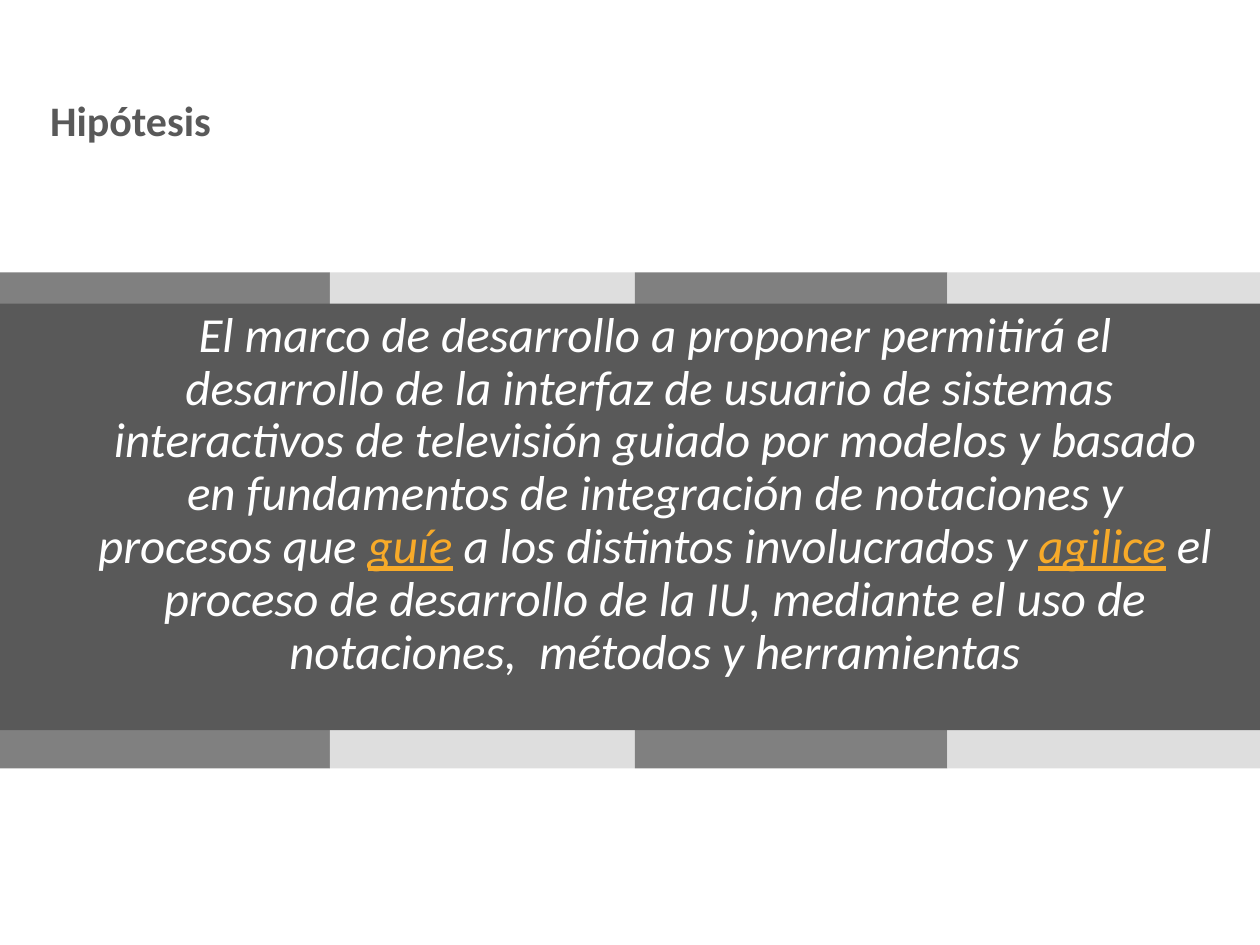
from itertools import cycle
from pptx import Presentation
from pptx.dml.color import RGBColor
from pptx.enum import shapes, text
from pptx.util import Cm, Pt

COLORS = {
    "dark": "595959",
    "middle": "808080",
    "light": "DEDEDE",
    "white": "FFFFFF",
    "accent": "F7AA29",
}


class SlideBuilder:
    font_name = "Calibri"
    line_spacing = 0.9

    def __init__(self, deck):
        self.page = deck.slides.add_slide(deck.slide_layouts[6])

    def color(self, name):
        return RGBColor.from_string(COLORS[name])

    def block(self, left, top, width, height, fill):
        box = self.page.shapes.add_shape(
            shapes.MSO_SHAPE.RECTANGLE, Cm(left), Cm(top), Cm(width), Cm(height)
        )
        box.shadow.inherit = False
        box.fill.solid()
        box.fill.fore_color.rgb = self.color(fill)
        box.line.fill.background()

    def label(self, left, top, width, height, spans, align, **style):
        box = self.page.shapes.add_textbox(Cm(left), Cm(top), Cm(width), Cm(height))
        frame = box.text_frame
        frame.word_wrap = True
        frame.vertical_anchor = text.MSO_ANCHOR.TOP
        para = frame.paragraphs[0]
        para.alignment = align
        para.line_spacing = self.line_spacing
        for words, color, extra in spans:
            span = para.add_run()
            span.text = words
            span.font.color.rgb = self.color(color)
            for key, value in {"name": self.font_name, **style, **extra}.items():
                setattr(span.font, key, value)


def main():
    deck = Presentation()
    deck.slide_width, deck.slide_height = Cm(25.4), Cm(19.05)
    slide = SlideBuilder(deck)

    edges = [-0.3, 6.65, 12.8, 19.1, 25.4]
    for left, right, fill in zip(edges, edges[1:], cycle(["middle", "light"])):
        slide.block(left, 5.49, right - left, 10, fill)
    slide.block(-0.46, 6.12, 26.11, 8.6, "dark")

    emphasis = {"underline": True}
    hypothesis = [
        ("El marco de desarrollo a proponer permitirá el desarrollo de la interfaz "
         "de usuario de sistemas  interactivos de televisión guiado por modelos y "
         "basado en fundamentos de integración de notaciones y procesos que ",
         "white", {}),
        ("guíe", "accent", emphasis),
        (" a los distintos involucrados y ", "white", {}),
        ("agilice", "accent", emphasis),
        (" el proceso de desarrollo de la IU, mediante el uso de notaciones,  "
         "métodos y herramientas", "white", {}),
    ]
    slide.label(1.7, 6.12, 23, 7.8, hypothesis, text.PP_ALIGN.CENTER,
                size=Pt(28), italic=True)
    slide.label(0.76, 1.9, 22.73, 1.83, [("Hipótesis", "dark", {})],
                text.PP_ALIGN.LEFT, size=Pt(24), bold=True)

    deck.save("out.pptx")


if __name__ == "__main__":
    main()
